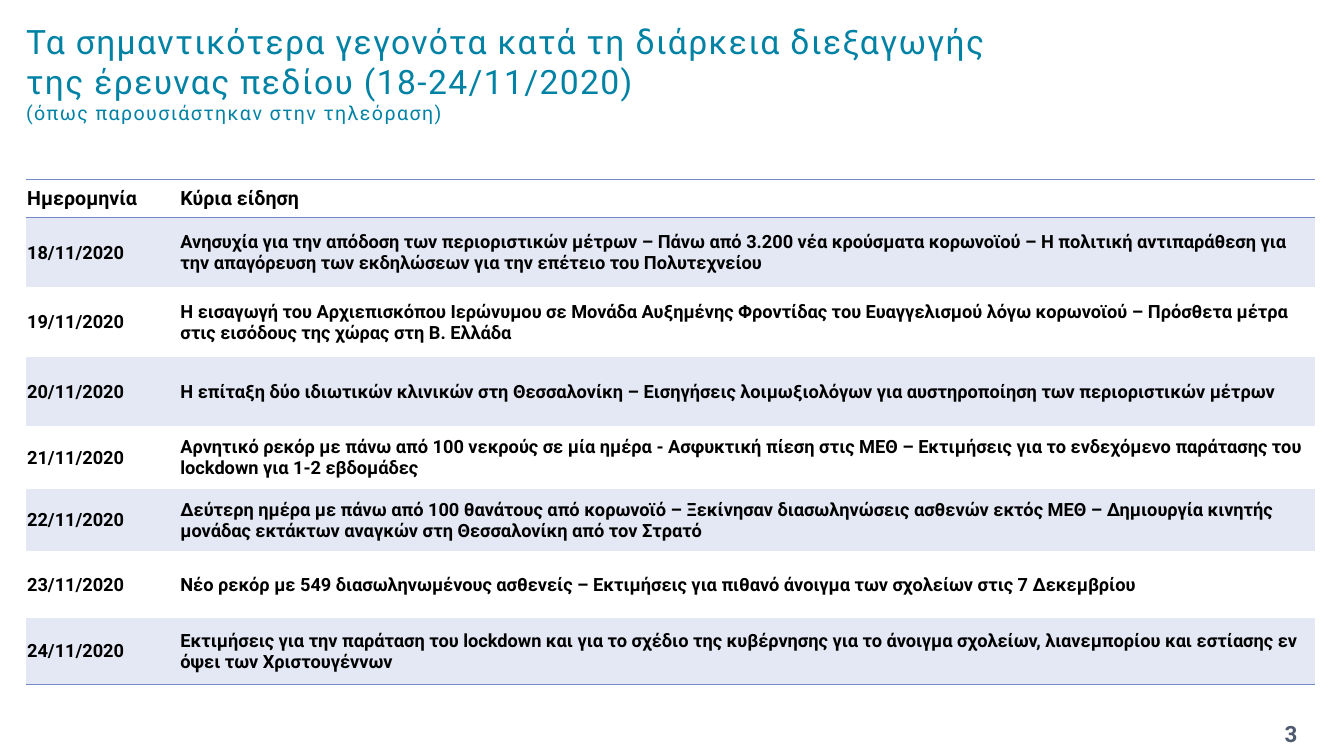
import lxml.etree
import pptx
import pptx.dml.color
import pptx.enum.text
import pptx.oxml.ns
import pptx.util

Inches = pptx.util.Inches
Pt = pptx.util.Pt
RGBColor = pptx.dml.color.RGBColor
qn = pptx.oxml.ns.qn
MIDDLE = pptx.enum.text.MSO_ANCHOR.MIDDLE
CENTER = pptx.enum.text.PP_ALIGN.CENTER

TEAL = RGBColor(0x00, 0x82, 0xA5)
BLACK = RGBColor(0x00, 0x00, 0x00)
SLATE = RGBColor(0x4E, 0x5B, 0x6F)
RULE_BLUE = RGBColor(0x73, 0x8A, 0xC8)
BAND_BLUE = RGBColor(0xE3, 0xE8, 0xF4)
FONT_NAME = "Roboto"
PLAIN_TABLE_STYLE = "{2D5ABB26-0587-4C30-8999-92F81FD0307C}"

TITLE = "Τα σημαντικότερα γεγονότα κατά τη διάρκεια διεξαγωγής της έρευνας πεδίου (18-24/11/2020)"
SUBTITLE = "(όπως παρουσιάστηκαν στην τηλεόραση)"
HEADINGS = ("Ημερομηνία", "Κύρια είδηση")
FIRST_DAY = 18
NEWS = [
    "Ανησυχία για την απόδοση των περιοριστικών μέτρων – Πάνω από 3.200 νέα κρούσματα κορωνοϊού – Η πολιτική αντιπαράθεση για την απαγόρευση των εκδηλώσεων για την επέτειο του Πολυτεχνείου",
    "Η εισαγωγή του Αρχιεπισκόπου Ιερώνυμου σε Μονάδα Αυξημένης Φροντίδας του Ευαγγελισμού λόγω κορωνοϊού – Πρόσθετα μέτρα στις εισόδους της χώρας στη Β. Ελλάδα",
    "Η επίταξη δύο ιδιωτικών κλινικών στη Θεσσαλονίκη – Εισηγήσεις λοιμωξιολόγων για αυστηροποίηση των περιοριστικών μέτρων",
    "Αρνητικό ρεκόρ με πάνω από 100 νεκρούς σε μία ημέρα - Ασφυκτική πίεση στις ΜΕΘ – Εκτιμήσεις για το ενδεχόμενο παράτασης του lockdown για 1-2 εβδομάδες",
    "Δεύτερη ημέρα με πάνω από 100 θανάτους από κορωνοϊό – Ξεκίνησαν διασωληνώσεις ασθενών εκτός ΜΕΘ – Δημιουργία κινητής μονάδας εκτάκτων αναγκών στη Θεσσαλονίκη από τον Στρατό",
    "Νέο ρεκόρ με 549 διασωληνωμένους ασθενείς – Εκτιμήσεις για πιθανό άνοιγμα των σχολείων στις 7 Δεκεμβρίου",
    "Εκτιμήσεις για την παράταση του lockdown και για το σχέδιο της κυβέρνησης για το άνοιγμα σχολείων, λιανεμπορίου και εστίασης εν όψει των Χριστουγέννων",
]
COLUMN_WIDTHS = (1.52, 11.26)
ROW_HEIGHTS = (0.38, 0.69, 0.69, 0.69, 0.62, 0.62, 0.66, 0.66)


def format_run(run, size, color, bold=False):
    run.font.name = FONT_NAME
    run.font.size = Pt(size)
    run.font.color.rgb = color
    run.font.bold = bold


def add_text(slide, left, top, width, height):
    shape = slide.shapes.add_textbox(Inches(left), Inches(top), Inches(width), Inches(height))
    shape.text_frame.word_wrap = True
    return shape.text_frame


def add_title(slide):
    text_frame = add_text(slide, 0.16, 0.13, 9.9, 1.18)
    text_frame.vertical_anchor = MIDDLE
    text_frame.text = f"{TITLE}\n{SUBTITLE}"
    for paragraph, size in zip(text_frame.paragraphs, (24, 14)):
        for run in paragraph.runs:
            format_run(run, size, TEAL)
            run.font._element.set("spc", "100")


def add_page_number(slide, number):
    text_frame = add_text(slide, 12.28, 7.1, 1.05, 0.4)
    text_frame.text = str(number)
    paragraph = text_frame.paragraphs[0]
    paragraph.alignment = CENTER
    format_run(paragraph.runs[0], 16, SLATE, bold=True)


def add_border(cell, side):
    properties = cell._tc.get_or_add_tcPr()
    line = lxml.etree.SubElement(properties, qn(f"a:ln{side}"), w=str(Pt(1)))
    fill = lxml.etree.SubElement(line, qn("a:solidFill"))
    lxml.etree.SubElement(fill, qn("a:srgbClr"), val=str(RULE_BLUE))


def fill_cell(cell, text, size, banded, border_sides):
    cell.text = text
    format_run(cell.text_frame.paragraphs[0].runs[0], size, BLACK, bold=True)
    cell.vertical_anchor = MIDDLE
    cell.margin_left = cell.margin_right = cell.margin_top = Inches(0.01)
    cell.margin_bottom = 0
    for side in border_sides:
        add_border(cell, side)
    if banded:
        cell.fill.solid()
        cell.fill.fore_color.rgb = BAND_BLUE
    else:
        cell.fill.background()


def add_news_table(slide):
    rows = [HEADINGS] + [(f"{day}/11/2020", news) for day, news in enumerate(NEWS, FIRST_DAY)]
    frame = slide.shapes.add_table(
        len(rows), len(HEADINGS), Inches(0.26), Inches(1.78),
        Inches(sum(COLUMN_WIDTHS)), Inches(sum(ROW_HEIGHTS)))
    table = frame.table
    table.first_row = False
    table.horz_banding = False
    table._tbl.tblPr.find(qn("a:tableStyleId")).text = PLAIN_TABLE_STYLE
    for column, width in zip(table.columns, COLUMN_WIDTHS):
        column.width = Inches(width)
    for row, height in zip(table.rows, ROW_HEIGHTS):
        row.height = Inches(height)
    border_sides = {0: "TB", len(NEWS): "B"}
    for row_index, texts in enumerate(rows):
        size = 13 if row_index else 14
        for column_index, text in enumerate(texts):
            fill_cell(table.cell(row_index, column_index), text, size,
                      row_index % 2 == 1, border_sides.get(row_index, ""))


def main():
    presentation = pptx.Presentation()
    presentation.slide_width = Inches(13.33)
    presentation.slide_height = Inches(7.5)
    slide = presentation.slides.add_slide(presentation.slide_layouts[6])
    add_title(slide)
    add_news_table(slide)
    add_page_number(slide, 3)
    presentation.save("out.pptx")


if __name__ == "__main__":
    main()
